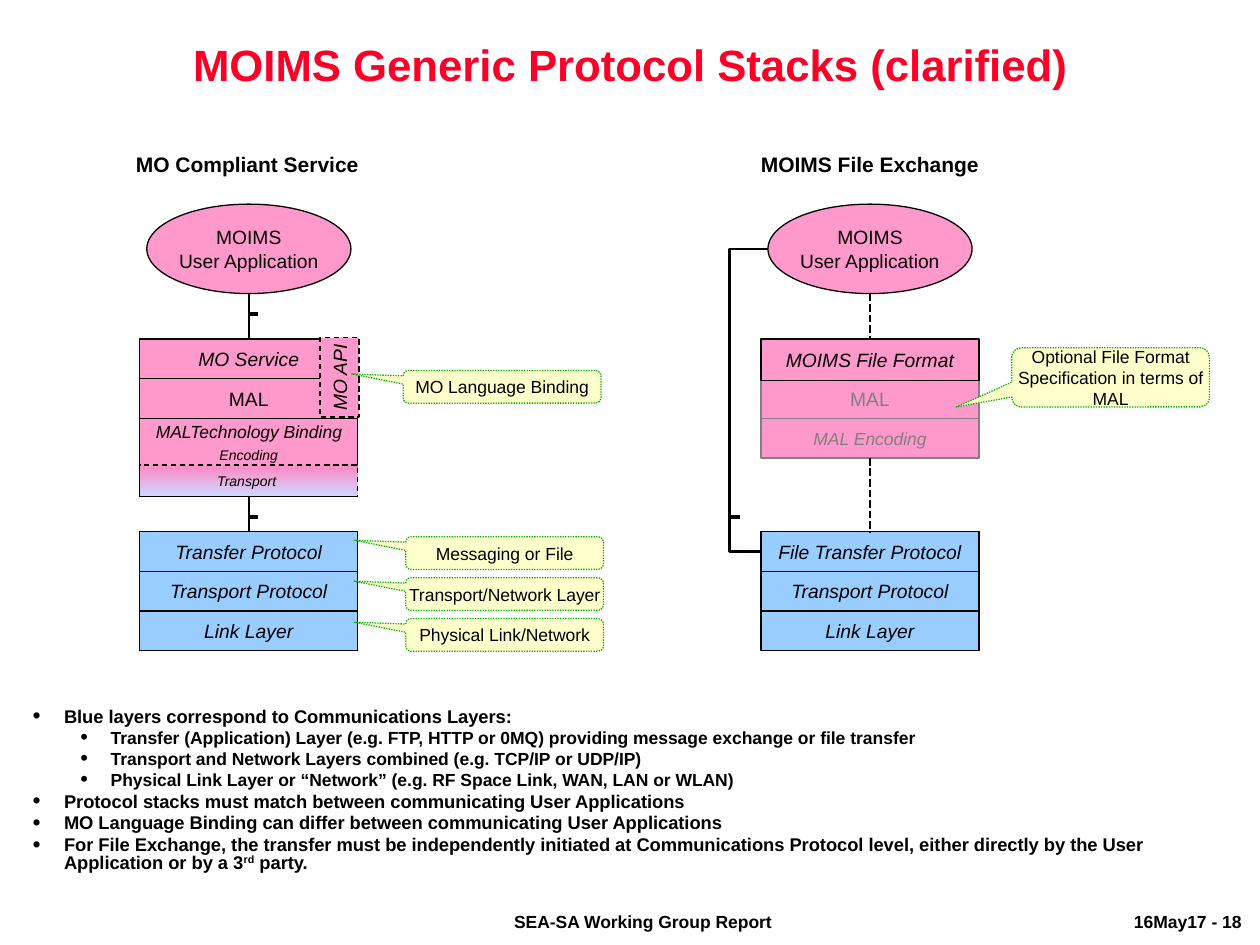
"""Build the protocol stacks slide with python-pptx."""
from lxml.etree import SubElement
from pptx import Presentation
from pptx.dml.color import RGBColor
from pptx.enum.dml import MSO_LINE
from pptx.enum.shapes import MSO_CONNECTOR, MSO_SHAPE
from pptx.enum.text import MSO_ANCHOR, PP_ALIGN
from pptx.oxml.ns import qn
from pptx.util import Inches, Pt

BLACK = RGBColor(0x00, 0x00, 0x00)
GRAY = RGBColor(0x80, 0x80, 0x80)
RED = RGBColor(0xFC, 0x01, 0x28)
PINK = RGBColor(0xFF, 0x99, 0xCC)
BLUE = RGBColor(0x99, 0xCC, 0xFF)
YELLOW = RGBColor(0xFF, 0xFF, 0xCC)
GREEN = RGBColor(0x00, 0xAE, 0x00)
GRADIENT_STOPS = ((0.07, RGBColor(0xFF, 0x8D, 0xC6)), (0.98, RGBColor(0xCC, 0xD6, 0xFF)))

FONT = "Arial"
SERVICE_LEFT, FILE_LEFT = 1.11, 6.04
LAYER_WIDTH, LAYER_HEIGHT = 1.73, 0.315
UPPER_TOP, LOWER_TOP = 2.69, 4.22
ELLIPSE_TOP, ELLIPSE_WIDTH, ELLIPSE_HEIGHT = 1.62, 1.62, 0.71
CALLOUT_WIDTH = 1.57
BYPASS_LEFT = 5.79

BULLETS = (
    (0, ("Blue layers correspond to Communications Layers:",)),
    (1, ("Transfer (Application) Layer (e.g. FTP, HTTP or 0MQ) providing message exchange or file transfer",)),
    (1, ("Transport and Network Layers combined (e.g. TCP/IP or UDP/IP)",)),
    (1, ("Physical Link Layer or “Network” (e.g. RF Space Link, WAN, LAN or WLAN)",)),
    (0, ("Protocol stacks must match between communicating User Applications",)),
    (0, ("MO Language Binding can differ between communicating User Applications",)),
    (0, ("For File Exchange, the transfer must be independently initiated at Communications Protocol "
         "level, either directly by the User Application or by a 3", "rd", " party.")),
)


def add_run(paragraph, text, size, color=BLACK, bold=False, italic=False):
    """Append one formatted run and return it."""
    run = paragraph.add_run()
    run.text = text
    font = run.font
    font.name, font.size, font.bold, font.italic = FONT, Pt(size), bold, italic
    font.color.rgb = color
    return run


def set_margins(frame, horizontal, vertical):
    """Set the insets of a text frame in inches."""
    frame.margin_left = frame.margin_right = Inches(horizontal)
    frame.margin_top = frame.margin_bottom = Inches(vertical)


def add_box(slide, kind, box, lines, size, fill=PINK, line=BLACK, color=BLACK, italic=False,
            dash=None, anchor=MSO_ANCHOR.MIDDLE, margins=(0.02, 0.02)):
    """Add a preset shape with centred lines of text."""
    shape = slide.shapes.add_shape(kind, *map(Inches, box))
    shape.shadow.inherit = False
    if fill is None:
        shape.fill.background()
    else:
        shape.fill.solid()
        shape.fill.fore_color.rgb = fill
    shape.line.color.rgb = line
    shape.line.width = Pt(0.75)
    if dash:
        shape.line.dash_style = dash
    frame = shape.text_frame
    frame.word_wrap = True
    frame.vertical_anchor = anchor
    set_margins(frame, *margins)
    for number, text in enumerate(lines):
        paragraph = frame.add_paragraph() if number else frame.paragraphs[0]
        paragraph.alignment = PP_ALIGN.CENTER
        add_run(paragraph, text, size, color, italic=italic)
    return shape


def add_layer(slide, left, top, text, height=LAYER_HEIGHT, size=11, italic=True, **style):
    """Add one rectangular layer of a stack."""
    box = (left, top, LAYER_WIDTH, height)
    return add_box(slide, MSO_SHAPE.RECTANGLE, box, [text], size, italic=italic, **style)


def add_communication_layers(slide, left, first):
    """Add the three blue layers and return the top one."""
    layers = [add_layer(slide, left, LOWER_TOP + row * LAYER_HEIGHT, text, fill=BLUE)
              for row, text in enumerate((first, "Transport Protocol", "Link Layer"))]
    return layers[0]


def add_user_application(slide, left):
    """Add the user application ellipse centred over a stack."""
    box = (left + (LAYER_WIDTH - ELLIPSE_WIDTH) / 2, ELLIPSE_TOP, ELLIPSE_WIDTH, ELLIPSE_HEIGHT)
    return add_box(slide, MSO_SHAPE.OVAL, box, ["MOIMS", "User Application"], 11, margins=(0, 0.05))


def add_callout(slide, left, top, text, height=0.26, tip=(-0.76, -0.39)):
    """Add a dotted rounded callout whose tip is a share of its size."""
    shape = add_box(slide, MSO_SHAPE.ROUNDED_RECTANGULAR_CALLOUT, (left, top, CALLOUT_WIDTH, height),
                    [text], 10, YELLOW, GREEN, dash=MSO_LINE.ROUND_DOT, margins=(0, 0))
    shape.adjustments[0], shape.adjustments[1] = tip


def add_line(slide, start, end, width=1.5, kind=MSO_CONNECTOR.STRAIGHT, dash=None):
    """Add a black connector between two points in inches."""
    line = slide.shapes.add_connector(kind, *map(Inches, (*start, *end)))
    line.line.color.rgb = BLACK
    line.line.width = Pt(width)
    if dash:
        line.line.dash_style = dash
    SubElement(line._element.spPr, qn("a:effectLst"))
    return line


def add_link(slide, upper, lower, dash=None):
    """Join the bottom of one shape to the top of a layer."""
    center = (upper.left + upper.width // 2) / Inches(1)
    bottom = (upper.top + upper.height) / Inches(1)
    line = add_line(slide, (center, bottom), (center, lower.top / Inches(1)), dash=dash)
    if upper.auto_shape_type == MSO_SHAPE.RECTANGLE:
        line.begin_connect(upper, 2)
    line.end_connect(lower, 0)


def add_bypass(slide, application, transfer):
    """Route a bent connector around the file format layers."""
    start = (application.left / Inches(1), (application.top + application.height / 2) / Inches(1))
    line = add_line(slide, start, (FILE_LEFT, LOWER_TOP), kind=MSO_CONNECTOR.ELBOW)
    line.end_connect(transfer, 1)
    share = (line.begin_x - Inches(BYPASS_LEFT)) / (line.begin_x - line.end_x)
    values = line._element.spPr.find(qn("a:prstGeom")).get_or_add_avLst()
    SubElement(values, qn("a:gd"), name="adj1", fmla=f"val {round(share * 100000)}")


def add_label(slide, box, text, size, margins=(0.1, 0.05)):
    """Add a bold single-line text box."""
    frame = slide.shapes.add_textbox(*map(Inches, box)).text_frame
    frame.word_wrap = False
    set_margins(frame, *margins)
    add_run(frame.paragraphs[0], text, size, bold=True)


def add_bullets(slide):
    """Add the two-level list of notes below the stacks."""
    frame = slide.shapes.add_textbox(*map(Inches, (0.16, 5.58, 9.69, 1.61))).text_frame
    frame.word_wrap = True
    for number, (level, texts) in enumerate(BULLETS):
        paragraph = frame.add_paragraph() if number else frame.paragraphs[0]
        paragraph.level = level
        paragraph.line_spacing = 0.8
        paragraph.space_before = paragraph.space_after = Pt(1.2)
        indent, hanging = ((0.25, 0.25), (0.62, 0.24))[level]
        properties = paragraph._p.get_or_add_pPr()
        properties.set("marL", str(Inches(indent)))
        properties.set("indent", str(-Inches(hanging)))
        SubElement(properties, qn("a:buSzPct"), val="125000")
        SubElement(properties, qn("a:buFont"), typeface=FONT)
        SubElement(properties, qn("a:buChar"), char="•")
        for text in texts:
            run = add_run(paragraph, text, (10.5, 10)[level], bold=True)
            if text == "rd":
                run.font._element.set("baseline", "30000")


def add_title(slide):
    """Fill and place the title placeholder."""
    title = slide.shapes.title
    title.left, title.top, title.width, title.height = map(Inches, (0.5, 0.3, 9, 1.25))
    title.text_frame.vertical_anchor = MSO_ANCHOR.TOP
    paragraph = title.text_frame.paragraphs[0]
    paragraph.alignment = PP_ALIGN.CENTER
    paragraph.line_spacing = 0.9
    add_run(paragraph, "MOIMS Generic Protocol Stacks (clarified)", 25, RED, bold=True)


def add_service_stack(slide):
    """Add the service stack with its bindings and callouts."""
    add_label(slide, (0.98, 1.15, 2.04, 0.3), "MO Compliant Service", 12)
    application = add_user_application(slide, SERVICE_LEFT)
    binding_top = UPPER_TOP + 2 * LAYER_HEIGHT
    add_layer(slide, SERVICE_LEFT, binding_top, "MALTechnology Binding", 0.62, 10, anchor=MSO_ANCHOR.TOP)
    add_layer(slide, SERVICE_LEFT, UPPER_TOP + LAYER_HEIGHT, "MAL", italic=False)
    service = add_layer(slide, SERVICE_LEFT, UPPER_TOP, "MO Service")
    add_layer(slide, SERVICE_LEFT, binding_top, "Encoding", 0.38, 8, fill=None,
              dash=MSO_LINE.DASH, anchor=MSO_ANCHOR.BOTTOM)
    transport = add_layer(slide, SERVICE_LEFT, 3.69, "Transport ", 0.25, 8, dash=MSO_LINE.DASH)
    transport.fill.gradient()
    transport.fill.gradient_angle = 270
    for stop, (position, color) in zip(transport.fill.gradient_stops, GRADIENT_STOPS):
        stop.position, stop.color.rgb = position, color
    interface = add_box(slide, MSO_SHAPE.RECTANGLE, (2.38, 2.84, 0.63, 0.31), ["MO API"], 11,
                        italic=True, dash=MSO_LINE.DASH)
    interface.rotation = 270
    transfer = add_communication_layers(slide, SERVICE_LEFT, "Transfer Protocol")
    add_link(slide, application, service)
    add_link(slide, transport, transfer)
    add_callout(slide, 3.2, 2.94, "MO Language Binding")
    for row, text in enumerate(("Messaging or File", "Transport/Network Layer", "Physical Link/Network")):
        add_callout(slide, 3.22, 4.26 + row * 0.325, text)


def add_file_stack(slide):
    """Add the file exchange stack with its bypass and callout."""
    add_label(slide, (5.94, 1.15, 1.95, 0.3), "MOIMS File Exchange", 12)
    application = add_user_application(slide, FILE_LEFT)
    faded = {"line": GRAY, "color": GRAY}
    add_layer(slide, FILE_LEFT, UPPER_TOP + LAYER_HEIGHT, "MAL", italic=False, **faded)
    encoding = add_layer(slide, FILE_LEFT, UPPER_TOP + 2 * LAYER_HEIGHT, "MAL Encoding", size=10, **faded)
    file_format = add_layer(slide, FILE_LEFT, UPPER_TOP, "MOIMS File Format", 0.33)
    transfer = add_communication_layers(slide, FILE_LEFT, "File Transfer Protocol")
    add_link(slide, application, file_format, MSO_LINE.SQUARE_DOT)
    add_link(slide, encoding, transfer, MSO_LINE.SQUARE_DOT)
    add_bypass(slide, application, transfer)
    add_callout(slide, 8.03, 2.76, "Optional File Format Specification in terms of MAL", 0.47, (-0.78, 0.5))


def main():
    """Build and save the slide."""
    presentation = Presentation()
    presentation.slide_width, presentation.slide_height = Inches(10), Inches(7.5)
    slide = presentation.slides.add_slide(presentation.slide_layouts[5])
    add_title(slide)
    add_service_stack(slide)
    add_file_stack(slide)
    for left, top in ((1.97, 2.49), (1.97, 4.1), (BYPASS_LEFT, 4.1)):
        add_line(slide, (left, top), (left + 0.08, top), 2.25)
    add_bullets(slide)
    add_label(slide, (3.99, 7.19, 2.26, 0.26), "SEA-SA Working Group Report", 10, (0.09, 0.04))
    add_label(slide, (8.91, 7.19, 1.06, 0.26), "16May17 - 18", 10, (0.09, 0.04))
    presentation.save("out.pptx")


if __name__ == "__main__":
    main()
